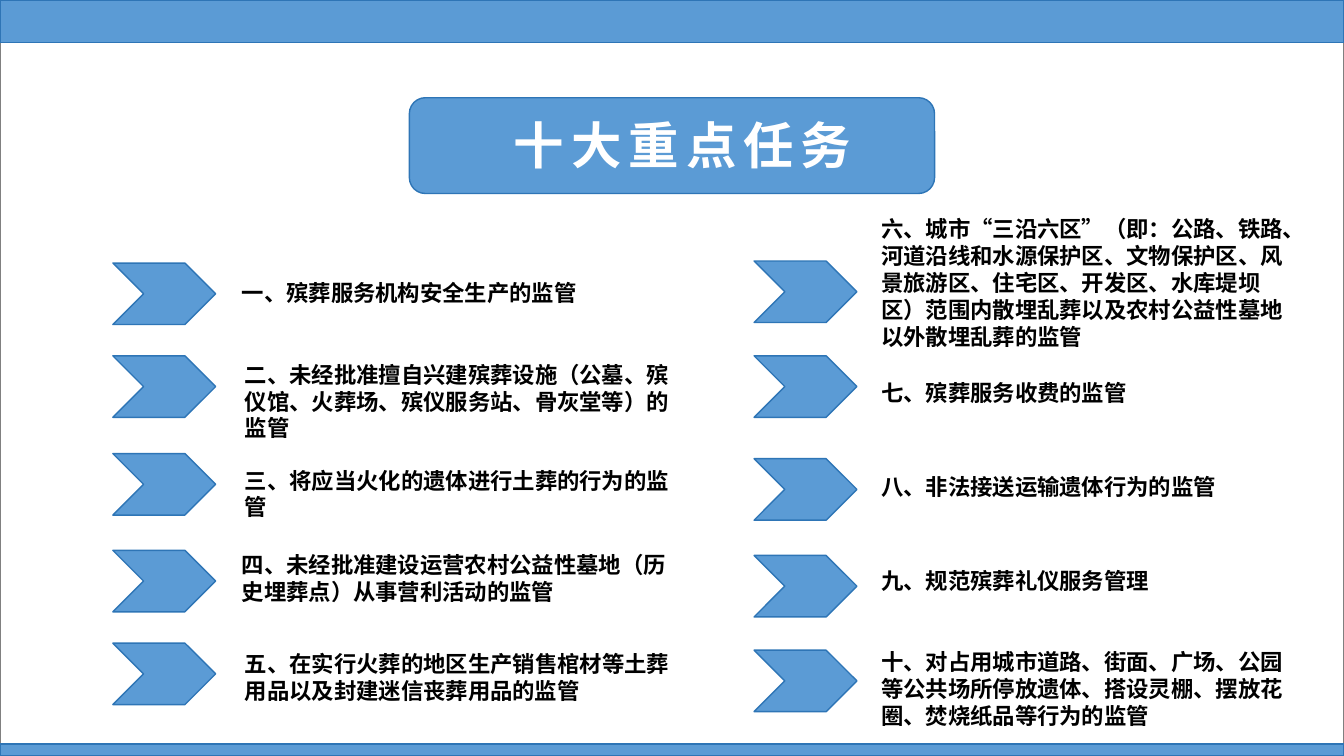
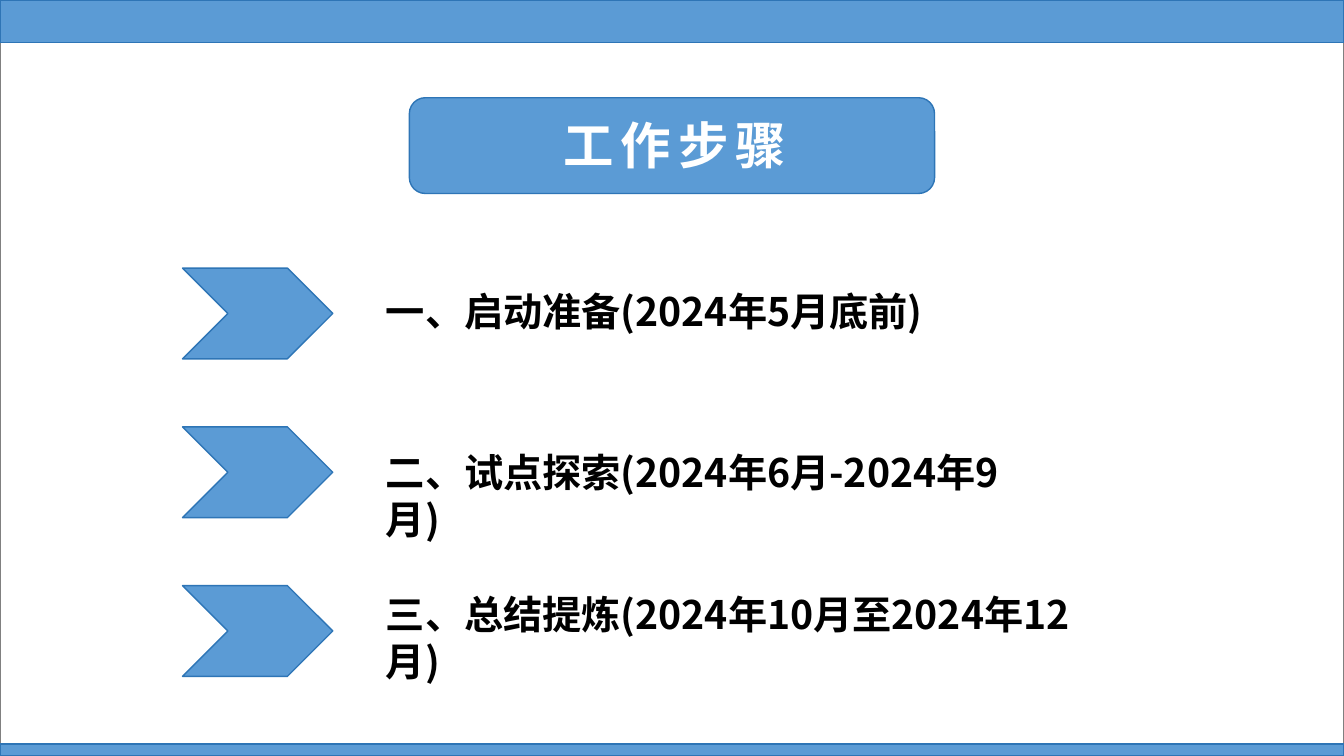
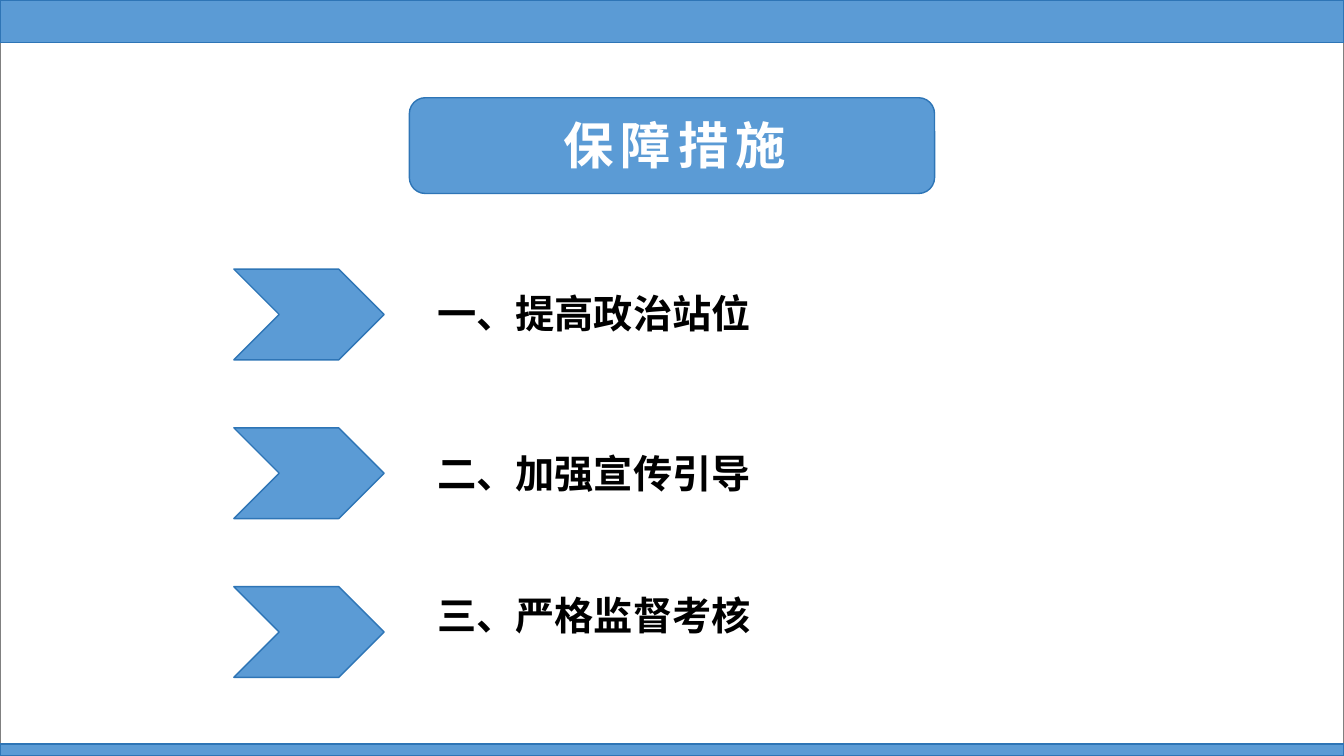
from pptx import Presentation
from pptx.dml.color import RGBColor
from pptx.enum.lang import MSO_LANGUAGE_ID
from pptx.enum.shapes import MSO_SHAPE
from pptx.enum.text import MSO_AUTO_SIZE, PP_ALIGN
from pptx.oxml.ns import qn
from pptx.util import Inches, Pt

WIDE, HIGH = Inches(13.33), Inches(7.5)
BLUE = RGBColor(0x5B, 0x9B, 0xD5)
EDGE = RGBColor(0x2E, 0x75, 0xB6)
GREY = RGBColor(0x80, 0x80, 0x80)
BLACK = RGBColor(0, 0, 0)
WHITE = RGBColor(0xFF, 0xFF, 0xFF)
FACE = "Noto Sans CJK SC"

FONT = {"name": FACE, "bold": True, "language_id": MSO_LANGUAGE_ID.SIMPLIFIED_CHINESE}
TITLE = {"size": Pt(36)}
TASK = {"size": Pt(16)}
STEP = {"size": Pt(28)}
BLOCK = {"alignment": PP_ALIGN.JUSTIFY}
LOOSE = {"alignment": PP_ALIGN.JUSTIFY, "line_spacing": Pt(28)}

SMALL = (7.65, 8.13)
LARGE = (11.18, 12)
ROW_GAP = 21

LEFT = [
    (34.8, 17.25, 36.27, 33.31, 1, {}, "一、殡葬服务机构安全生产的监管"),
    (47.07, 17.48, 47.07, 34.21, 3, {},
     "二、未经批准擅自兴建殡葬设施（公墓、殡仪馆、火葬场、殡仪服务站、骨灰堂等）的监管"),
    (60, 17.48, 61.07, 34.21, 2, {}, "三、将应当火化的遗体进行土葬的行为的监管"),
    (72.8, 17.25, 72.27, 34.51, 2, {},
     "四、未经批准建设运营农村公益性墓地（历史埋葬点）从事营利活动的监管"),
    (85.07, 17.48, 85.33, 33.08, 2, BLOCK,
     "五、在实行火葬的地区生产销售棺材等土葬用品以及封建迷信丧葬用品的监管"),
]
RIGHT = [
    (34.53, 64.82, 27.87, 33.01, 5, {},
     "六、城市“三沿六区”（即：公路、铁路、河道沿线和水源保护区、文物保护区、"
     "风景旅游区、住宅区、开发区、水库堤坝区）范围内散埋乱葬以及农村公益性墓地以外散埋乱葬的监管"),
    (47.07, 64.82, 47.87, 33.01, 1, LOOSE, "七、殡葬服务收费的监管"),
    (60.67, 64.82, 61.87, 33.01, 1, {}, "八、非法接送运输遗体行为的监管"),
    (73.47, 64.82, 74.4, 33.01, 1, {}, "九、规范殡葬礼仪服务管理"),
    (86, 64.82, 85.07, 33.01, 3, {},
     "十、对占用城市道路、街面、广场、公园等公共场所停放遗体、搭设灵棚、摆放花圈、焚烧纸品等行为的监管"),
]
STAGES = [
    (37.33, 44.04, "一、启动准备(2024年5月底前)"),
    (58.67, 50.64, "二、试点探索(2024年6月-2024年9月)"),
    (77.47, 56.19, "三、总结提炼(2024年10月至2024年12月)"),
]
PLEDGES = [
    (37.6, 44.04, "一、提高政治站位"),
    (58.8, 49.21, "二、加强宣传引导"),
    (77.6, 56.19, "三、严格监督考核"),
]


def place(x, y, w, h):
    return [round(part * side / 100)
            for part, side in zip((x, y, w, h), (WIDE, HIGH, WIDE, HIGH))]


def assign(target, *looks):
    for look in looks:
        for key, value in look.items():
            setattr(target, key, value)


def draw(slide, kind, box, fill=BLUE, edge=EDGE):
    shape = slide.shapes.add_shape(kind, *place(*box))
    shape.shadow.inherit = False
    if fill is None:
        shape.fill.background()
    else:
        shape.fill.solid()
        shape.fill.fore_color.rgb = fill
    shape.line.color.rgb = edge
    shape.line.width = Pt(1)


def write(slide, text, box, look, color=BLACK, para={}, track=0, grow=False):
    frame = slide.shapes.add_textbox(*place(*box)).text_frame
    fit = MSO_AUTO_SIZE.SHAPE_TO_FIT_TEXT if grow else MSO_AUTO_SIZE.NONE
    assign(frame, {"word_wrap": True, "auto_size": fit})
    line = frame.paragraphs[0]
    assign(line, para)
    run = line.add_run()
    run.text = text
    assign(run.font, FONT, look)
    run.font.color.rgb = color
    props = run.font._element
    props.get_or_change_to_solidFill()
    asian = props.makeelement(qn("a:ea"), {"typeface": FACE})
    props.find(qn("a:latin")).addnext(asian)
    if track:
        props.set("spc", str(track * 100))


def page(deck, title, x, w):
    slide = deck.slides.add_slide(deck.slide_layouts[6])
    draw(slide, MSO_SHAPE.ROUNDED_RECTANGLE, (30.46, 12.93, 39.08, 12.67))
    draw(slide, MSO_SHAPE.RECTANGLE, (0, 0, 100, 100), None, GREY)
    for top, tall in ((0, 5.6), (98.4, 1.6)):
        draw(slide, MSO_SHAPE.RECTANGLE, (0, top, 100, tall))
    write(slide, title, (x, 14.4, w, 9.47), TITLE, WHITE, track=5)
    return slide


def tasks(slide, x, items):
    for top, left, y, w, lines, para, text in items:
        draw(slide, MSO_SHAPE.CHEVRON, (x, top, *SMALL))
        tall = 1.33 + 3.6 * lines
        write(slide, text, (left, y, w, tall), TASK, para=para, grow=True)


def steps(slide, x, top, items):
    for row, (y, w, text) in enumerate(items):
        draw(slide, MSO_SHAPE.CHEVRON, (x, top + row * ROW_GAP, *LARGE))
        write(slide, text, (x + 14.4, y, w, 10), STEP)


def main():
    deck = Presentation()
    assign(deck, {"slide_width": WIDE, "slide_height": HIGH})
    slide = page(deck, "十大重点任务", 37.5, 30)
    tasks(slide, 8.4, LEFT)
    tasks(slide, 56.11, RIGHT)
    steps(page(deck, "工作步骤", 41.19, 21.08), 13.58, 35.47, STAGES)
    steps(page(deck, "保障措施", 41.19, 21.08), 17.4, 35.6, PLEDGES)
    deck.save("out.pptx")


if __name__ == "__main__":
    main()
